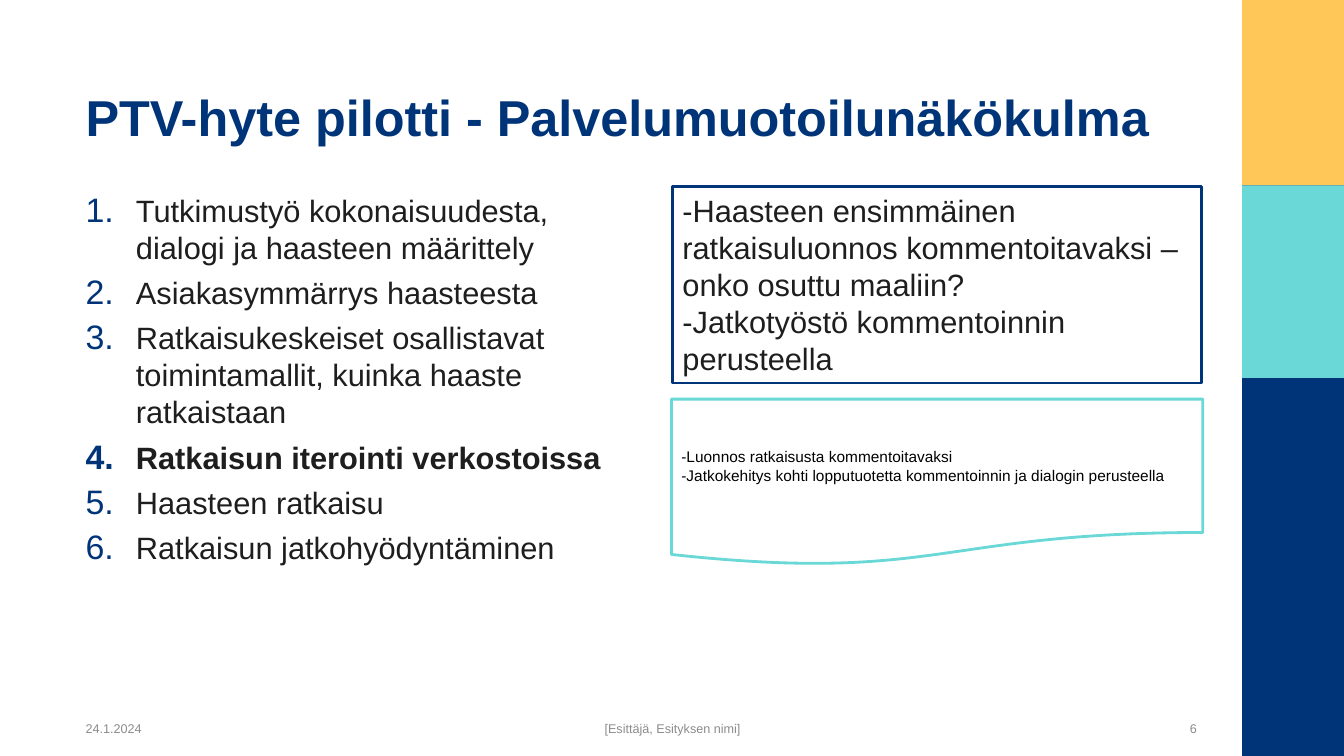
from lxml.etree import SubElement
from pptx import Presentation
from pptx.dml.color import RGBColor
from pptx.enum.shapes import MSO_SHAPE
from pptx.enum.text import MSO_ANCHOR, PP_ALIGN
from pptx.oxml.ns import qn
from pptx.util import Emu, Pt

NAVY, YELLOW, TEAL = "003479", "FFC658", "69D8D7"
WHITE, INK, BLACK, GREY = "FFFFFF", "1E1E1E", "000000", "8C8C8C"
SLIDE_W, SLIDE_H = 1333, 750
LEFT, CONTENT_W, BODY_TOP = 75, 1122, 185
SIDE_LEFT = 1232

STEPS = [
    "Tutkimustyö kokonaisuudesta, dialogi ja haasteen määrittely",
    "Asiakasymmärrys haasteesta",
    "Ratkaisukeskeiset osallistavat toimintamallit, kuinka haaste ratkaistaan",
    "Ratkaisun iterointi verkostoissa",
    "Haasteen ratkaisu",
    "Ratkaisun jatkohyödyntäminen",
]
CURRENT_STEP = "Ratkaisun iterointi verkostoissa"
TASKS = [
    "-Haasteen ensimmäinen ratkaisuluonnos kommentoitavaksi – onko osuttu maaliin?",
    "-Jatkotyöstö kommentoinnin perusteella",
]
OUTPUTS = [
    "-Luonnos ratkaisusta kommentoitavaksi",
    "-Jatkokehitys kohti lopputuotetta kommentoinnin ja dialogin perusteella",
]


def px(length):
    """Hundredths of an inch to EMU."""
    return Emu(length * 9144)


def color(hex_string):
    return RGBColor.from_string(hex_string)


def add_panel(slide, box, kind, fill, line=None):
    panel = slide.shapes.add_shape(kind, *map(px, box))
    panel.shadow.inherit = False
    panel.fill.solid()
    panel.fill.fore_color.rgb = color(fill)
    if line:
        panel.line.color.rgb = color(line)
        panel.line.width = Pt(2)
    else:
        panel.line.fill.background()
    return panel


def write(shape, texts, size, ink, bold=False, align=PP_ALIGN.LEFT,
          anchor=MSO_ANCHOR.TOP):
    """Fill a shape with one paragraph per text and return the paragraphs."""
    frame = shape.text_frame
    frame.word_wrap = True
    frame.vertical_anchor = anchor
    for index, text in enumerate(texts):
        paragraph = frame.add_paragraph() if index else frame.paragraphs[0]
        paragraph.alignment = align
        run = paragraph.add_run()
        run.text = text
        run.font.name = "Arial"
        run.font.size = Pt(size)
        run.font.bold = bold
        run.font.color.rgb = color(ink)
    return frame.paragraphs


def add_text(slide, box, texts, size, ink, **style):
    return write(slide.shapes.add_textbox(*map(px, box)), texts, size, ink, **style)


def number(paragraph, indent):
    """Give a paragraph an automatic navy number."""
    properties = paragraph._p.get_or_add_pPr()
    properties.set("marL", str(px(indent)))
    properties.set("indent", str(-px(indent)))
    bullet_color = SubElement(properties, qn("a:buClr"))
    SubElement(bullet_color, qn("a:srgbClr"), val=NAVY)
    SubElement(properties, qn("a:buSzPct"), val="110000")
    SubElement(properties, qn("a:buFont"), typeface="+mj-lt")
    SubElement(properties, qn("a:buAutoNum"), type="arabicPeriod")


def add_side_band(slide, left, top, width, height):
    yellow_h, teal_h = 184, 191
    bands = [(0, height, NAVY), (0, yellow_h, YELLOW), (yellow_h, teal_h, TEAL)]
    for offset, band_h, fill in bands:
        add_panel(slide, (left, top + offset, width, band_h),
                  MSO_SHAPE.RECTANGLE, fill)


def add_steps(slide, box):
    paragraphs = add_text(slide, box, STEPS, 22, INK)
    for index, paragraph in enumerate(paragraphs):
        if index:
            paragraph.space_before = Pt(6)
        number(paragraph, 50)
        step = paragraph.runs[0]
        step.font.bold = step.text == CURRENT_STEP


def add_details(slide, left, top, width):
    tasks_h, outputs_h, gap = 195, 165, 16
    tasks = add_panel(slide, (left, top, width, tasks_h),
                      MSO_SHAPE.RECTANGLE, WHITE, NAVY)
    write(tasks, TASKS, 22, INK)
    outputs = add_panel(slide, (left - 1, top + tasks_h + gap, width + 2, outputs_h),
                        MSO_SHAPE.FLOWCHART_DOCUMENT, WHITE, TEAL)
    write(outputs, OUTPUTS, 11, BLACK, anchor=MSO_ANCHOR.MIDDLE)


def add_footer(slide, left, top, width, height):
    number_w = 91
    fields = [
        (left, 165, "24.1.2024", PP_ALIGN.LEFT),
        (left + 274, 636, "[Esittäjä, Esityksen nimi]", PP_ALIGN.CENTER),
        (left + width - number_w, number_w, "6", PP_ALIGN.RIGHT),
    ]
    for field_left, field_w, text, align in fields:
        add_text(slide, (field_left, top, field_w, height), [text], 9, GREY,
                 align=align, anchor=MSO_ANCHOR.MIDDLE)


def main():
    deck = Presentation()
    deck.slide_width, deck.slide_height = px(SLIDE_W), px(SLIDE_H)
    slide = deck.slides.add_slide(deck.slide_layouts[6])
    add_side_band(slide, SIDE_LEFT, 0, SLIDE_W - SIDE_LEFT, SLIDE_H)
    add_text(slide, (LEFT, 16, CONTENT_W, 134),
             ["PTV-hyte pilotti - Palvelumuotoilunäkökulma"], 36, NAVY,
             bold=True, anchor=MSO_ANCHOR.BOTTOM)
    add_steps(slide, (LEFT, BODY_TOP, 551, 504))
    add_details(slide, 667, BODY_TOP, 525)
    add_footer(slide, LEFT, 711, CONTENT_W, 24)
    deck.save("out.pptx")


if __name__ == "__main__":
    main()
